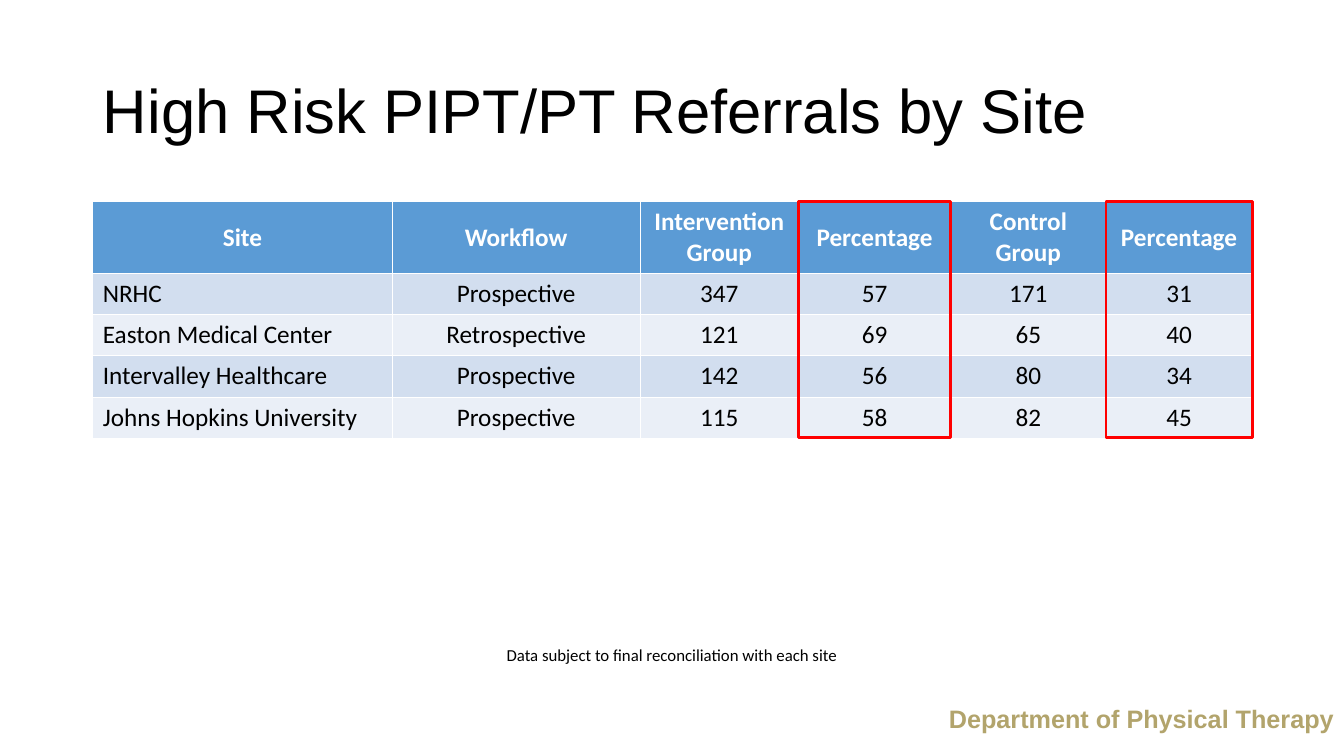
from pptx import Presentation
from pptx.dml.color import RGBColor
from pptx.enum.shapes import MSO_SHAPE as Shape
from pptx.enum.text import MSO_ANCHOR as Anchor, PP_ALIGN as Align
from pptx.util import Inches, Pt

BLACK = RGBColor(0x00, 0x00, 0x00)
WHITE = RGBColor(0xFF, 0xFF, 0xFF)
GOLD = RGBColor(0xB2, 0xA4, 0x6C)
RED = RGBColor(0xFF, 0x00, 0x00)
HEADER_BLUE = RGBColor(0x5B, 0x9B, 0xD5)
BANDS = [RGBColor(0xD2, 0xDE, 0xEF), RGBColor(0xEA, 0xEF, 0xF7)]

LEFT, TABLE_TOP, CONTENT_WIDTH = 0.92, 2, 11.5
COLUMN_WIDTHS = [2.97, 2.46, 1.57, 1.51, 1.54, 1.45]
HEADER_HEIGHT, ROW_HEIGHT = 0.7, 0.41
ROWS = [
    ["Site", "Workflow", "Intervention\nGroup", "Percentage", "Control Group", "Percentage"],
    ["NRHC", "Prospective", "347", "57", "171", "31"],
    ["Easton Medical Center", "Retrospective", "121", "69", "65", "40"],
    ["Intervalley Healthcare", "Prospective", "142", "56", "80", "34"],
    ["Johns Hopkins University", "Prospective", "115", "58", "82", "45"],
]
TABLE_HEIGHT = HEADER_HEIGHT + ROW_HEIGHT * (len(ROWS) - 1)


def write(frame, text, size, align, font="Calibri", color=BLACK, bold=False):
    frame.text = text
    frame.word_wrap = True
    for para in frame.paragraphs:
        para.alignment = align
        for span in para.runs:
            span.font.name = font
            span.font.size = Pt(size)
            span.font.bold = bold
            span.font.color.rgb = color


deck = Presentation()
deck.slide_width, deck.slide_height = Inches(13.33), Inches(7.5)
page = deck.slides.add_slide(deck.slide_layouts[5])

# Title
title = page.shapes.title
title.left, title.top = Inches(LEFT), Inches(0.4)
title.width, title.height = Inches(CONTENT_WIDTH), Inches(1.45)
write(title.text_frame, "High Risk PIPT/PT Referrals by Site", 44, Align.LEFT, font="Arial")
title.text_frame.vertical_anchor = Anchor.MIDDLE
title.text_frame.paragraphs[0].line_spacing = 0.9

# Referral table
table = page.shapes.add_table(
    len(ROWS), len(COLUMN_WIDTHS), Inches(LEFT), Inches(TABLE_TOP),
    Inches(CONTENT_WIDTH), Inches(TABLE_HEIGHT)).table
for column, width in zip(table.columns, COLUMN_WIDTHS):
    column.width = Inches(width)
for r, values in enumerate(ROWS):
    is_header = r == 0
    table.rows[r].height = Inches(HEADER_HEIGHT if is_header else ROW_HEIGHT)
    for c, value in enumerate(values):
        cell = table.cell(r, c)
        cell.fill.solid()
        cell.fill.fore_color.rgb = HEADER_BLUE if is_header else BANDS[(r - 1) % 2]
        cell.vertical_anchor = Anchor.MIDDLE if is_header else Anchor.TOP
        write(cell.text_frame, value, 18,
              Align.CENTER if is_header or c > 0 else Align.LEFT,
              color=WHITE if is_header else BLACK, bold=is_header)

# Red frames around the percentage columns
for c, heading in enumerate(ROWS[0]):
    if heading == "Percentage":
        frame = page.shapes.add_shape(
            Shape.RECTANGLE, Inches(LEFT + sum(COLUMN_WIDTHS[:c])), Inches(TABLE_TOP),
            Inches(COLUMN_WIDTHS[c]), Inches(TABLE_HEIGHT))
        frame.shadow.inherit = False
        frame.fill.background()
        frame.line.color.rgb = RED
        frame.line.width = Pt(2)

# Data note and department footer
note = page.shapes.add_textbox(Inches(2.83), Inches(6.35), Inches(7.67), Inches(0.3))
write(note.text_frame, "Data subject to final reconciliation with each site", 12, Align.CENTER)
footer = page.shapes.add_textbox(Inches(6.57), Inches(6.93), Inches(6.76), Inches(0.4))
write(footer.text_frame, "Department of Physical Therapy", 18, Align.RIGHT,
      font="Arial", color=GOLD, bold=True)

deck.save("out.pptx")
